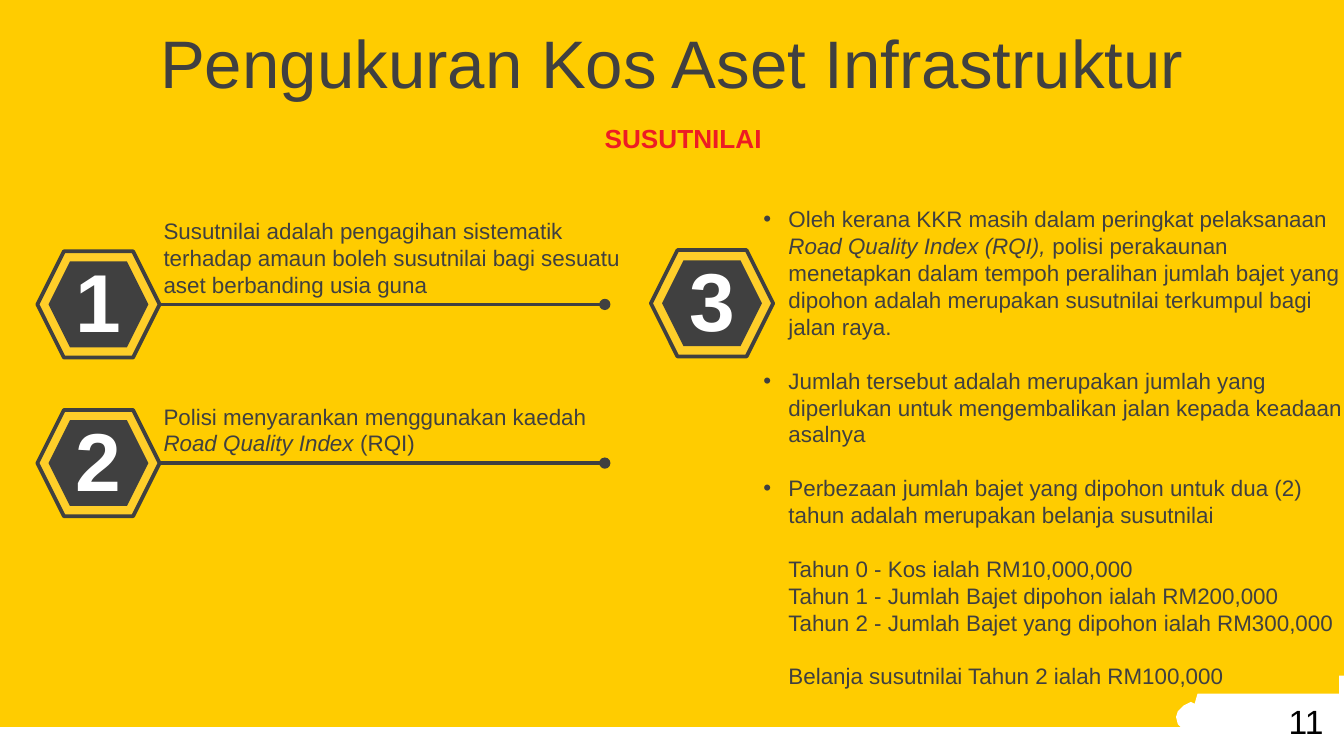
import pptx
import pptx.util
import pptx.dml.color
import pptx.enum.shapes
import pptx.enum.text
import pptx.oxml
import pptx.oxml.ns
from lxml import etree

Pt = pptx.util.Pt
SHAPE = pptx.enum.shapes.MSO_SHAPE
ALIGN = pptx.enum.text.PP_ALIGN
ANCHOR = pptx.enum.text.MSO_ANCHOR

COLORS = {
    "yellow": "FFCC00",
    "amber": "FFCE29",
    "dark": "404040",
    "red": "ED1C24",
    "white": "FFFFFF",
    "black": "000000",
}
FONT = "Arial"
BODY_SIZE = 12
LINE_PITCH = 14.4
INDENT = 13.5
HEX_W, HEX_H = 65.5, 57

STEPS = [
    ("1", 134.6, 51, [("Susutnilai adalah pengagihan sistematik terhadap amaun boleh "
                       "susutnilai bagi sesuatu aset berbanding usia guna", False)]),
    ("2", 219.6, 36, [("Polisi menyarankan menggunakan kaedah ", False),
                      ("Road Quality Index ", True), ("(RQI)", False)]),
]
POLICIES = [
    [("Oleh kerana KKR masih dalam peringkat pelaksanaan ", False),
     ("Road Quality Index (RQI), ", True),
     ("polisi perakaunan menetapkan dalam tempoh peralihan jumlah bajet yang dipohon "
      "adalah merupakan susutnilai terkumpul bagi jalan raya.", False)],
    [("Jumlah tersebut adalah merupakan jumlah yang diperlukan untuk mengembalikan "
      "jalan kepada keadaan asalnya", False)],
    [("Perbezaan jumlah bajet yang dipohon untuk dua (2) tahun adalah merupakan "
      "belanja susutnilai", False)],
]
EXAMPLE = [
    "Tahun 0 - Kos ialah RM10,000,000",
    "Tahun 1 - Jumlah Bajet dipohon ialah RM200,000",
    "Tahun 2 - Jumlah Bajet yang dipohon ialah RM300,000",
    "Belanja susutnilai Tahun 2 ialah RM100,000",
]
# Outline of the corner cloud, in points
CLOUD = [
    (681, 330.5), (687.5, 330.5), (689, 343.5), (696, 348), (704, 350), (708, 356),
    (714, 357), (716.5, 362), (720, 362), (720, 403), (714, 402.5), (709.5, 400.5),
    (704, 402.5), (698, 399), (691, 403), (684.5, 399.5), (672.5, 404), (664, 402.5),
    (657.5, 397), (651, 398), (645, 395.5), (642.5, 391.5), (638, 392.5), (633.5, 391),
    (630.8, 388), (630, 384.5), (630.8, 381), (633.5, 378), (638, 376.5), (640, 376.8),
    (641.5, 370), (646, 366), (652.5, 364.5), (664.5, 360.5), (669, 353.5), (678, 344.5),
]


def rgb(name):
    return pptx.dml.color.RGBColor.from_string(COLORS[name])


def add_text(slide, box, paragraphs, size=BODY_SIZE, color="dark", bold=False,
             align=ALIGN.LEFT, anchor=ANCHOR.TOP, wrap=True, pitch=None):
    """Each paragraph is a list of (text, italic) runs; returns the paragraphs."""
    frame = slide.shapes.add_textbox(*map(Pt, box)).text_frame
    frame.word_wrap = wrap
    frame.vertical_anchor = anchor
    for index, runs in enumerate(paragraphs):
        paragraph = frame.add_paragraph() if index else frame.paragraphs[0]
        paragraph.alignment = align
        if pitch:
            paragraph.line_spacing = Pt(pitch)
        for text, italic in runs:
            run = paragraph.add_run()
            run.text = text
            run.font.name = FONT
            run.font.size = Pt(size)
            run.font.bold = bold
            run.font.italic = italic
            run.font.color.rgb = rgb(color)
    return frame.paragraphs


def paint(shape, fill, line=None):
    shape.shadow.inherit = False
    shape.fill.solid()
    shape.fill.fore_color.rgb = rgb(fill)
    if line:
        shape.line.color.rgb = rgb(line)
        shape.line.width = Pt(2)
    else:
        shape.line.fill.background()


def add_filled(slide, kind, box, fill, line=None):
    paint(slide.shapes.add_shape(kind, *map(Pt, box)), fill, line)


def indent(paragraph, bullet):
    properties = paragraph._p.get_or_add_pPr()
    properties.set("marL", str(Pt(INDENT)))
    properties.set("indent", str(-Pt(INDENT) if bullet else 0))
    if bullet:
        etree.SubElement(properties, pptx.oxml.ns.qn("a:buFont"), typeface=FONT)
        etree.SubElement(properties, pptx.oxml.ns.qn("a:buChar"), char="•")


def draw_corner(slide):
    """White footer strip and cloud, partly hidden by a yellow panel."""
    add_filled(slide, SHAPE.RECTANGLE, (0, 389.5, 720, 15.5), "white")
    builder = slide.shapes.build_freeform(*CLOUD[0], scale=Pt(1))
    builder.add_line_segments(CLOUD[1:], close=True)
    paint(builder.convert_to_shape(), "white")
    add_filled(slide, SHAPE.RECTANGLE, (609, 304, 108.3, 67.6), "yellow")


def draw_badge(slide, left, top, number):
    add_filled(slide, SHAPE.HEXAGON, (left, top, HEX_W, HEX_H), "amber", "dark")
    add_filled(slide, SHAPE.HEXAGON, (left + 6, top + 5.5, HEX_W - 12, HEX_H - 11), "dark")
    add_text(slide, (left + 13, top - 3.8, 39.6, 60.5), [[(number, False)]], size=44,
             color="white", bold=True, align=ALIGN.CENTER, wrap=False)


def draw_step(slide, left, top, number, text_height, runs):
    """Badge with a dotted rule and the text that stands on it."""
    rule_y = top + HEX_H / 2
    draw_badge(slide, left, top, number)
    rule = slide.shapes.add_connector(pptx.enum.shapes.MSO_CONNECTOR.STRAIGHT,
                                      Pt(left + HEX_W), Pt(rule_y), Pt(324), Pt(rule_y))
    rule.line.color.rgb = rgb("dark")
    rule.line.width = Pt(2)
    etree.SubElement(rule.line._get_or_add_ln(), pptx.oxml.ns.qn("a:tailEnd"), type="oval")
    etree.SubElement(rule._element.spPr, pptx.oxml.ns.qn("a:effectLst"))
    add_text(slide, (left + 60.5, rule_y - text_height, 259, text_height), [runs],
             anchor=ANCHOR.BOTTOM, pitch=LINE_PITCH)


def draw_policies(slide, box):
    lines = POLICIES + [[(text, False)] for text in EXAMPLE]
    paragraphs = add_text(slide, box, lines, pitch=LINE_PITCH)
    first_example = len(POLICIES)
    section_starts = {*range(1, first_example + 1), len(lines) - 1}
    for index, paragraph in enumerate(paragraphs):
        indent(paragraph, bullet=index < first_example)
        if index in section_starts:
            paragraph.space_before = Pt(LINE_PITCH)


def draw_headings(slide):
    centred = {"align": ALIGN.CENTER, "anchor": ANCHOR.MIDDLE}
    add_text(slide, (0, 10, 720, 45.5), [[("Pengukuran Kos Aset Infrastruktur", False)]],
             size=36, **centred)
    add_text(slide, (192, 63, 348, 22), [[("SUSUTNILAI", False)]],
             size=14, color="red", bold=True, **centred)


def main():
    deck = pptx.Presentation()
    deck.slide_width, deck.slide_height = Pt(720), Pt(405)
    slide = deck.slides.add_slide(deck.slide_layouts[6])
    slide.background.fill.solid()
    slide.background.fill.fore_color.rgb = rgb("yellow")

    draw_corner(slide)
    draw_headings(slide)
    for number, top, text_height, runs in STEPS:
        draw_step(slide, 20, top, number, text_height, runs)
    draw_badge(slide, 348.7, 134, "3")
    draw_policies(slide, (401.8, 106.6, 324.7, 269.3))
    add_text(slide, (683.3, 372.2, 43, 29), [[("11", False)]], size=18, color="black")
    deck.save("out.pptx")


if __name__ == "__main__":
    main()
